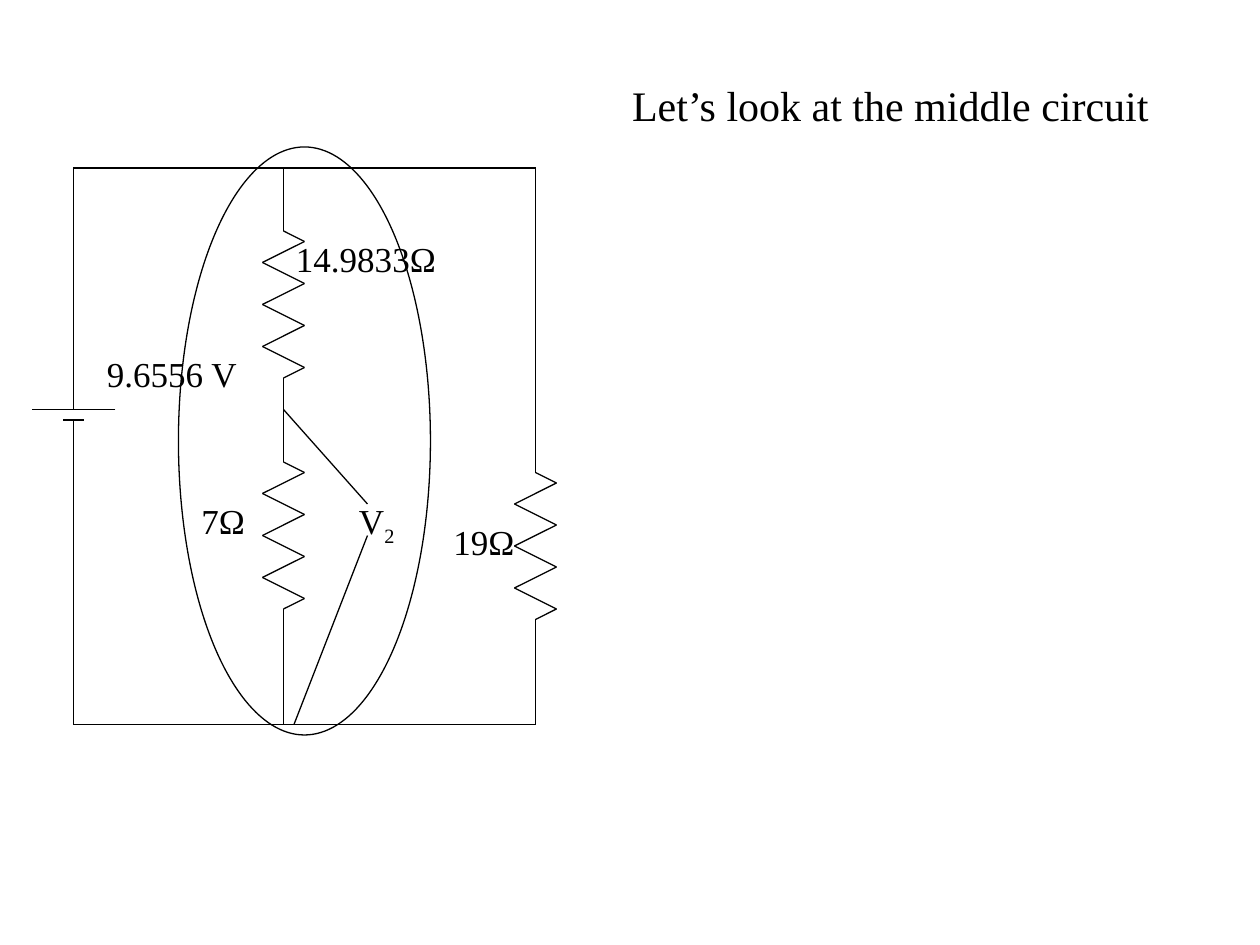
import pptx
import pptx.util
import pptx.dml.color
import pptx.enum.shapes
import pptx.enum.text
import pptx.oxml.ns
import lxml.etree

PX = 7620
INK = "000000"


def color(value):
    return pptx.dml.color.RGBColor.from_string(value)


def wire(start, end):
    line = slide.shapes.add_connector(
        pptx.enum.shapes.MSO_CONNECTOR.STRAIGHT,
        start[0] * PX, start[1] * PX, end[0] * PX, end[1] * PX)
    line.line.color.rgb = color(INK)
    line.line.width = pptx.util.Pt(0.75)
    lxml.etree.SubElement(line._element.spPr, pptx.oxml.ns.qn("a:effectLst"))


presentation = pptx.Presentation()
presentation.slide_width = 1200 * PX
presentation.slide_height = 900 * PX
slide = presentation.slides.add_slide(presentation.slide_layouts[5])

heading = slide.shapes.title
heading.left, heading.top, heading.width, heading.height = [
    side * PX for side in (590, 70, 560, 60)]
heading.text_frame.text = "Let’s look at the middle circuit"
heading.text_frame.word_wrap = True
heading.text_frame.auto_size = pptx.enum.text.MSO_AUTO_SIZE.NONE
heading.text_frame.vertical_anchor = pptx.enum.text.MSO_ANCHOR.TOP
heading_line = heading.text_frame.paragraphs[0]
heading_line.alignment = pptx.enum.text.PP_ALIGN.LEFT
heading_line.font.name = "Times New Roman"
heading_line.font.size = pptx.util.Pt(24)
heading_line.font.color.rgb = color(INK)

battery = [((110, 390), (30, 390)), ((80, 400), (60, 400))]
left_branch = [((70, 160), (70, 390)), ((70, 400), (70, 450)), ((70, 450), (70, 690))]
bottom_rail = [((130, 690), (290, 690)), ((70, 690), (130, 690)), ((280, 690), (510, 690))]
top_rail = [((130, 160), (510, 160)), ((70, 160), (140, 160))]
middle_branch = [((270, 160), (270, 220)), ((270, 360), (270, 440)), ((270, 580), (270, 690))]
right_branch = [((510, 160), (510, 210)), ((510, 200), (510, 440)),
                ((510, 430), (510, 450)), ((510, 590), (510, 690))]
voltmeter_leads = [((270, 390), (350, 480)), ((350, 510), (280, 690))]

for start, end in (battery + left_branch + bottom_rail + top_rail
                   + middle_branch + right_branch + voltmeter_leads):
    wire(start, end)

for x, top in [(270, 220), (270, 440), (510, 450)]:
    zigzag = [(x, top)]
    for step in range(7):
        side = 20 if step % 2 == 0 else -20
        zigzag.append((x + side, top + 10 + 20 * step))
    zigzag.append((x, top + 140))
    for start, end in zip(zigzag, zigzag[1:]):
        wire(start, end)

labels = [
    ("9.6556 V", "", 90, 330, 149),
    ("7Ω", "", 180, 470, 66),
    ("19Ω", "", 420, 490, 83),
    ("V", "2", 330, 470, 59),
    ("14.9833Ω", "", 270, 220, 157),
]
for value, subscript, left, top, width in labels:
    label = slide.shapes.add_textbox(left * PX, top * PX, width * PX, 52 * PX)
    label.text_frame.word_wrap = False
    label.text_frame.auto_size = pptx.enum.text.MSO_AUTO_SIZE.SHAPE_TO_FIT_TEXT
    label_line = label.text_frame.paragraphs[0]
    label_line.font.name = "Times New Roman"
    label_line.font.size = pptx.util.Pt(20)
    label_line.font.color.rgb = color(INK)
    label_line.add_run().text = value
    if subscript:
        index = label_line.add_run()
        index.text = subscript
        index.font._element.set("baseline", "-25000")

highlight = slide.shapes.add_shape(
    pptx.enum.shapes.MSO_SHAPE.OVAL, 170 * PX, 140 * PX, 240 * PX, 560 * PX)
highlight.shadow.inherit = False
highlight.fill.background()
highlight.line.color.rgb = color(INK)
highlight.line.width = pptx.util.Pt(0.75)

presentation.save("out.pptx")
